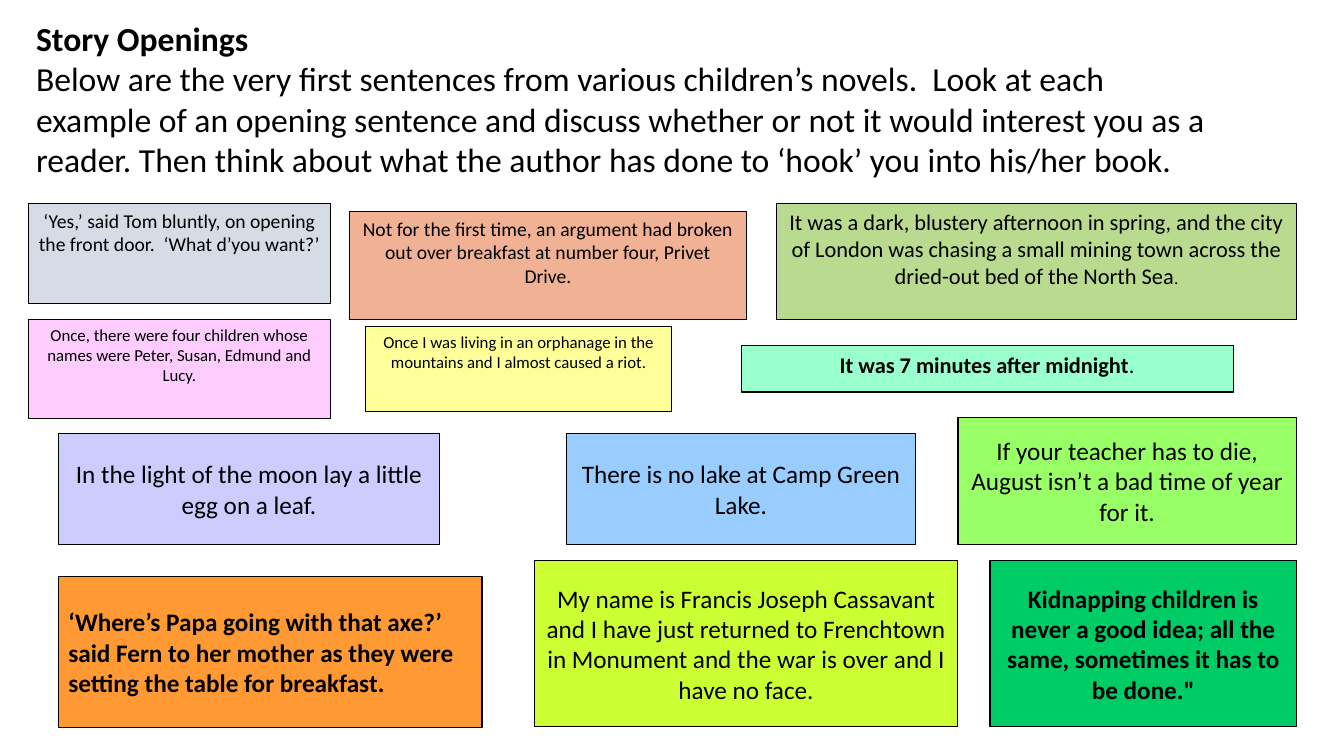
from dataclasses import dataclass

from pptx import Presentation
from pptx import util as u
from pptx.dml.color import RGBColor
from pptx.enum import shapes, text

BLACK = RGBColor(0x00, 0x00, 0x00)
GREY = RGBColor(0xD6, 0xDC, 0xE5)
PINK = RGBColor(0xFF, 0xCC, 0xFF)
YELLOW = RGBColor(0xFF, 0xFF, 0x99)
SALMON = RGBColor(0xF0, 0xB1, 0x95)
OLIVE = RGBColor(0xB9, 0xDA, 0x8F)
MINT = RGBColor(0x99, 0xFF, 0xCC)
LILAC = RGBColor(0xCC, 0xCC, 0xFF)
SKY = RGBColor(0x99, 0xCC, 0xFF)
ORANGE = RGBColor(0xFF, 0x99, 0x33)
LIME = RGBColor(0xCC, 0xFF, 0x33)
LIGHT_GREEN = RGBColor(0x99, 0xFF, 0x66)
GREEN = RGBColor(0x00, 0xCC, 0x66)

TOP = text.MSO_ANCHOR.TOP
MIDDLE = text.MSO_ANCHOR.MIDDLE
LEFT = text.PP_ALIGN.LEFT
CENTER = text.PP_ALIGN.CENTER


@dataclass
class Phrase:
    words: str
    size: float
    bold: bool = False


@dataclass
class Opening:
    left: float
    top: float
    width: float
    height: float
    fill: RGBColor
    phrases: list[Phrase]
    anchor: text.MSO_ANCHOR = MIDDLE
    align: text.PP_ALIGN = CENTER
    border: float = 1


OPENINGS = [
    Opening(0.28, 2.02, 3, 0.99, GREY, [Phrase(
        "‘Yes,’ said Tom bluntly, on opening the front door.  ‘What d’you want?’", 14)],
        TOP, border=0.75),
    Opening(0.28, 3.17, 3, 0.98, PINK, [Phrase(
        "Once, there were four children whose names were Peter, Susan, Edmund and Lucy.", 12)],
        TOP, border=0.75),
    Opening(3.63, 3.24, 3.03, 0.84, YELLOW, [Phrase(
        "Once I was living in an orphanage in the mountains and I almost caused a riot.", 12)],
        TOP, border=0.75),
    Opening(3.47, 2.1, 3.93, 1.07, SALMON, [Phrase(
        "Not for the first time, an argument had broken out over breakfast at number four, "
        "Privet Drive.", 14)],
        TOP, border=0.75),
    Opening(7.7, 2.02, 5.16, 1.15, OLIVE, [Phrase(
        "It was a dark, blustery afternoon in spring, and the city of London was chasing "
        "a small mining town across the dried-out bed of the North Sea", 16), Phrase(".", 12)],
        TOP, border=0.75),
    Opening(7.35, 3.43, 4.88, 0.46, MINT, [
        Phrase("It was 7 minutes after midnight", 16, True), Phrase(".", 16)],
        TOP, border=0.75),
    Opening(0.58, 4.3, 3.78, 1.1, LILAC, [Phrase(
        "In the light of the moon lay a little egg on a leaf.", 18)]),
    Opening(5.62, 4.3, 3.46, 1.1, SKY, [Phrase("There is no lake at Camp Green Lake.", 18)]),
    Opening(0.58, 5.72, 4.2, 1.5, ORANGE, [Phrase(
        "‘Where’s Papa going with that axe?’ said Fern to her mother as they were setting "
        "the table for breakfast.", 18, True)], align=LEFT),
    Opening(5.3, 5.56, 4.2, 1.65, LIME, [Phrase(
        "My name is Francis Joseph Cassavant and I have just returned to Frenchtown in "
        "Monument and the war is over and I have no face.", 18)]),
    Opening(9.5, 4.14, 3.36, 1.26, LIGHT_GREEN, [Phrase(
        "If your teacher has to die, August isn’t a bad time of year for it.", 18)]),
    Opening(9.82, 5.56, 3.04, 1.65, GREEN, [Phrase(
        "Kidnapping children is never a good idea; all the same, sometimes it has to be "
        "done.\"", 18, True)]),
]

INTRODUCTION = [
    Phrase("Story Openings", 24, True),
    Phrase("Below are the very first sentences from various children’s novels.  Look at each "
           "example of an opening sentence and discuss whether or not it would interest you "
           "as a reader. Then think about what the author has done to ‘hook’ you into "
           "his/her book.", 24),
]


def write_phrase(paragraph, phrase: Phrase) -> None:
    run = paragraph.add_run()
    run.text = phrase.words
    run.font.color.rgb = BLACK
    formats = {"name": "Calibri", "size": u.Pt(phrase.size), "bold": phrase.bold}
    for attribute, value in formats.items():
        setattr(run.font, attribute, value)


def draw_opening(slide, opening: Opening) -> None:
    card = slide.shapes.add_shape(
        shapes.MSO_SHAPE.RECTANGLE, u.Inches(opening.left), u.Inches(opening.top),
        u.Inches(opening.width), u.Inches(opening.height))
    card.shadow.inherit = False
    card.fill.solid()
    card.fill.fore_color.rgb = opening.fill
    card.line.color.rgb = BLACK
    card.line.width = u.Pt(opening.border)
    frame = card.text_frame
    for attribute, value in {"word_wrap": True, "vertical_anchor": opening.anchor}.items():
        setattr(frame, attribute, value)
    sentence = frame.paragraphs[0]
    sentence.alignment = opening.align
    for phrase in opening.phrases:
        write_phrase(sentence, phrase)


def draw_introduction(slide) -> None:
    introduction = slide.shapes.add_textbox(
        u.Inches(0.26), u.Inches(0.13), u.Inches(11.97), u.Inches(2.12))
    frame = introduction.text_frame
    for attribute, value in {"word_wrap": True, "vertical_anchor": TOP}.items():
        setattr(frame, attribute, value)
    for index, phrase in enumerate(INTRODUCTION):
        paragraph = frame.add_paragraph() if index else frame.paragraphs[0]
        write_phrase(paragraph, phrase)


def main() -> None:
    deck = Presentation()
    deck.slide_width, deck.slide_height = u.Inches(13.33), u.Inches(7.5)
    slide = deck.slides.add_slide(deck.slide_layouts[6])
    draw_introduction(slide)
    for opening in OPENINGS:
        draw_opening(slide, opening)
    deck.save("out.pptx")


if __name__ == "__main__":
    main()
